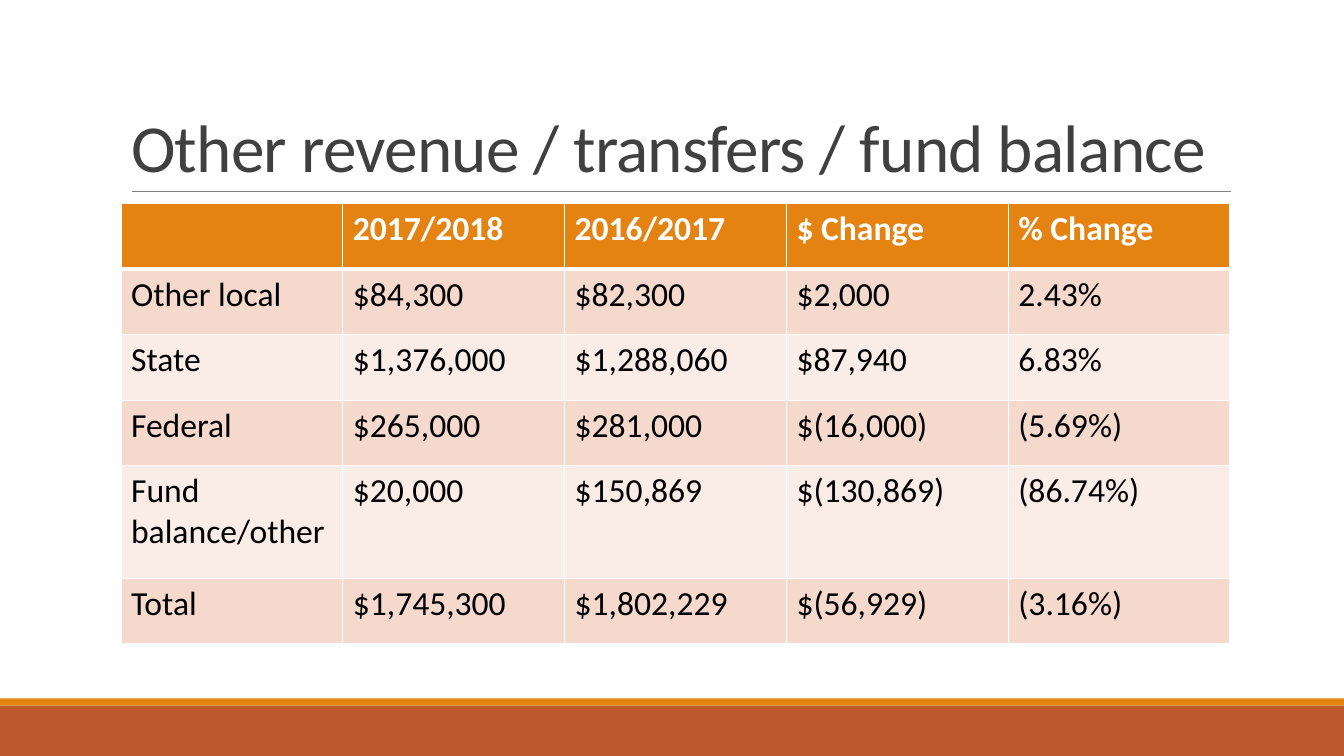
from lxml import etree
from pptx import Presentation
from pptx.dml.color import RGBColor
from pptx.enum import shapes, text
from pptx.oxml import ns
from pptx.util import Inches, Pt

TITLE = "Other revenue / transfers / fund balance"
ROWS = [
    ("", "2017/2018", "2016/2017", "$ Change", "% Change"),
    ("Other local", "$84,300", "$82,300", "$2,000", "2.43%"),
    ("State", "$1,376,000", "$1,288,060", "$87,940", "6.83%"),
    ("Federal", "$265,000", "$281,000", "$(16,000)", "(5.69%)"),
    ("Fund balance/other", "$20,000", "$150,869", "$(130,869)", "(86.74%)"),
    ("Total", "$1,745,300", "$1,802,229", "$(56,929)", "(3.16%)"),
]
HEIGHTS = [0.65, 0.65, 0.65, 0.65, 1.12, 0.65]
LEFT, WIDTH = 1.2, 11
COLORS = {
    "rust": "BD582C", "orange": "E48312", "rule": "808080", "title": "404040",
    "white": "FFFFFF", "black": "000000", "dark": "F5D9CC", "light": "FAEDE7",
}
BARS = [(7, 0.5, "rust"), (6.93, 0.07, "orange")]  # top, height, colour


def color(name):
    return RGBColor.from_string(COLORS[name])


def style(run, size, name, bold=False):
    font = run.font
    font.name, font.size, font.bold = "Calibri", Pt(size), bold
    font.color.rgb = color(name)


def add_bars(slide):
    for top, high, name in BARS:
        bar = slide.shapes.add_shape(
            shapes.MSO_SHAPE.RECTANGLE, 0, Inches(top), Inches(13.33), Inches(high))
        bar.shadow.inherit = False
        bar.fill.solid()
        bar.fill.fore_color.rgb = color(name)
        bar.line.fill.background()


def add_rule(slide):
    rule = slide.shapes.add_connector(
        shapes.MSO_CONNECTOR.STRAIGHT,
        Inches(1.31), Inches(1.9), Inches(12.21), Inches(1.9))
    rule.line.color.rgb = color("rule")
    rule.line.width = Pt(0.5)
    etree.SubElement(rule._element.spPr, ns.qn("a:effectLst"))


def set_title(slide):
    title = slide.shapes.title
    title.left, title.top = Inches(LEFT), Inches(0.31)
    title.width, title.height = Inches(WIDTH), Inches(1.59)
    frame = title.text_frame
    frame.text = TITLE
    frame.word_wrap = True
    frame.auto_size = text.MSO_AUTO_SIZE.NONE
    frame.vertical_anchor = text.MSO_ANCHOR.BOTTOM
    para = frame.paragraphs[0]
    para.alignment = text.PP_ALIGN.LEFT
    para.line_spacing = 0.85
    run = para.runs[0]
    style(run, 48, "title")
    run.font._element.set("spc", "-50")


def set_edges(cell, top, bottom):
    """Draw white borders, with top and bottom widths in points."""
    props = cell._tc.get_or_add_tcPr()
    edges = [("L", 1), ("R", 1), ("T", top), ("B", bottom)]
    for place, (side, width) in enumerate(edges):
        line = etree.Element(ns.qn("a:ln" + side), w=str(Pt(width)))
        fill = etree.SubElement(line, ns.qn("a:solidFill"))
        etree.SubElement(fill, ns.qn("a:srgbClr"), val=COLORS["white"])
        props.insert(place, line)


def add_grid(slide):
    count = len(ROWS[0])
    grid = slide.shapes.add_table(
        len(ROWS), count, Inches(LEFT), Inches(2.02),
        Inches(WIDTH), Inches(sum(HEIGHTS))).table
    for col in grid.columns:
        col.width = Inches(WIDTH / count)
    for r, values in enumerate(ROWS):
        grid.rows[r].height = Inches(HEIGHTS[r])
        head = r == 0
        back = "orange" if head else "dark" if r % 2 else "light"
        for c, value in enumerate(values):
            cell = grid.cell(r, c)
            cell.fill.solid()
            cell.fill.fore_color.rgb = color(back)
            set_edges(cell, 3 if r == 1 else 1, 3 if head else 1)
            if value:
                cell.text_frame.text = value
                run = cell.text_frame.paragraphs[0].runs[0]
                style(run, 24, "white" if head else "black", head)


def main():
    deck = Presentation()
    deck.slide_width, deck.slide_height = Inches(13.33), Inches(7.5)
    slide = deck.slides.add_slide(deck.slide_layouts.get_by_name("Title Only"))
    add_bars(slide)
    add_rule(slide)
    set_title(slide)
    add_grid(slide)
    deck.save("out.pptx")


if __name__ == "__main__":
    main()
